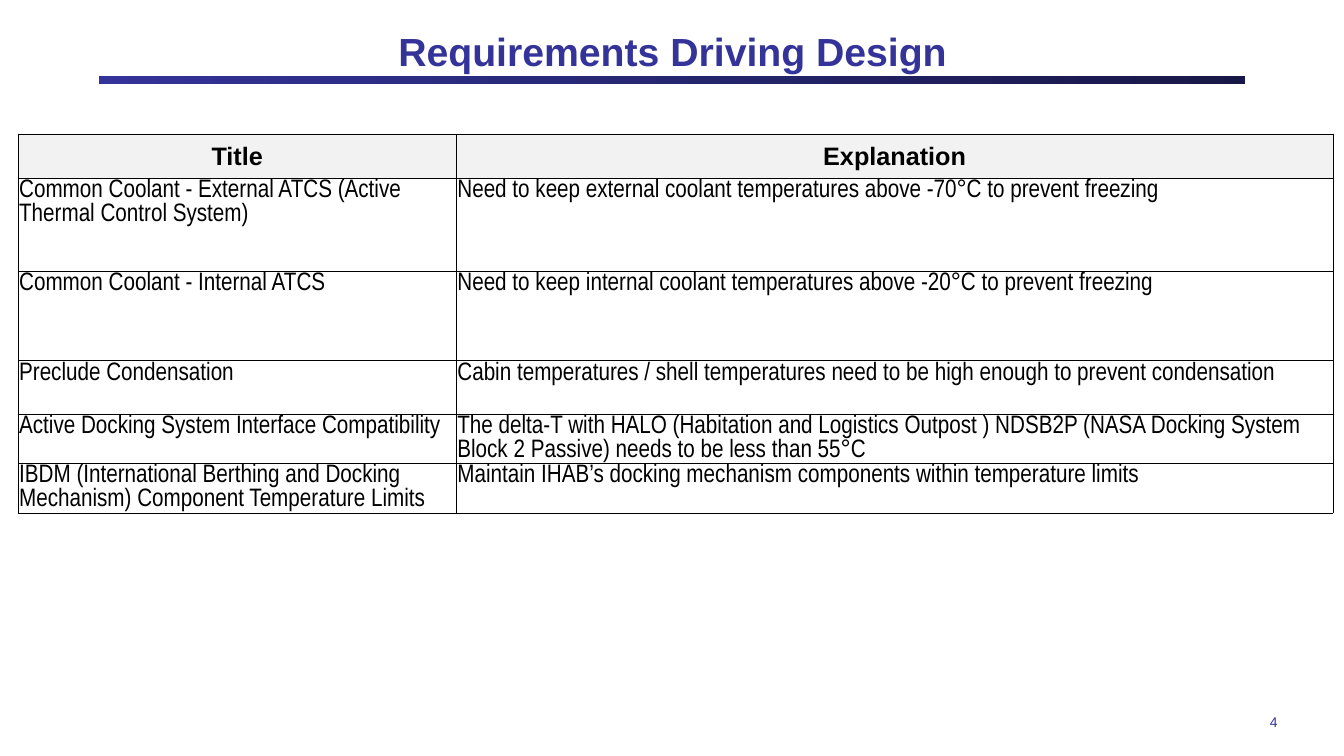
import pptx
import pptx.util
import pptx.dml.color
import pptx.enum.dml
import pptx.enum.shapes
import pptx.enum.text
import lxml.etree
import pptx.oxml.ns

inch = pptx.util.Inches
align = pptx.enum.text.PP_ALIGN
anchor = pptx.enum.text.MSO_ANCHOR
middle = anchor.MIDDLE


def tint(code):
    return pptx.dml.color.RGBColor.from_string(code)


def write(box, text, size=18, face="Arial", color="000000", bold=False,
          side=align.LEFT, place=anchor.TOP, pads=(0.01, 0.01, 0.01, 0)):
    frame = box.text_frame
    frame.word_wrap = True
    box.vertical_anchor = frame.vertical_anchor = place
    for spot in (box, frame):
        spot.margin_left, spot.margin_top, spot.margin_right, spot.margin_bottom = map(inch, pads)
    para = frame.paragraphs[0]
    para.alignment = side
    run = para.add_run()
    run.text = text
    run.font.size = pptx.util.Pt(size)
    run.font.name = face
    run.font.bold = bold
    run.font.color.rgb = tint(color)


deck = pptx.Presentation()
deck.slide_width, deck.slide_height = inch(13.33), inch(7.5)
slide = deck.slides.add_slide(deck.slide_layouts[5])
shapes = slide.shapes

bar = shapes.add_shape(pptx.enum.shapes.MSO_SHAPE.RECTANGLE,
                       inch(0.98), inch(0.75), inch(11.37), inch(0.08))
bar.shadow.inherit = False
bar.line.fill.background()
bar.fill.gradient()
bar.fill.gradient_angle = 0
for stop, code, spot in zip(bar.fill.gradient_stops, ("333399", "181847"), (0, 1)):
    stop.color.rgb = tint(code)
    stop.position = spot

title = shapes.title
title.left, title.top, title.width, title.height = map(inch, (0.67, 0.21, 12, 0.58))
write(title, "Requirements Driving Design", size=28, color="333399", bold=True,
      side=align.CENTER, place=middle, pads=(0.1, 0, 0.1, 0))

rows = [
    (0.44, "Title", "Explanation"),
    (0.92, "Common Coolant - External ATCS (Active Thermal Control System)",
     "Need to keep external coolant temperatures above -70°C to prevent freezing"),
    (0.89, "Common Coolant - Internal ATCS",
     "Need to keep internal coolant temperatures above -20°C to prevent freezing"),
    (0.53, "Preclude Condensation",
     "Cabin temperatures / shell temperatures need to be high enough to prevent condensation"),
    (0.49, "Active Docking System Interface Compatibility",
     "The delta-T with HALO (Habitation and Logistics Outpost ) NDSB2P "
     "(NASA Docking System Block 2 Passive) needs to be less than 55°C"),
    (0.49, "IBDM (International Berthing and Docking Mechanism) Component Temperature Limits",
     "Maintain IHAB’s docking mechanism components within temperature limits"),
]
wide = 13.04
tall = sum(row[0] for row in rows)
table = shapes.add_table(len(rows), 2, inch(0.18), inch(1.33), inch(wide), inch(tall)).table
table.first_row = table.horz_banding = False
for col, share in zip(table.columns, (1, 2)):
    col.width = inch(wide * share / 3)

qn = pptx.oxml.ns.qn
for r, (high, *texts) in enumerate(rows):
    table.rows[r].height = inch(high)
    for c, text in enumerate(texts):
        cell = table.cell(r, c)
        props = cell._tc.get_or_add_tcPr()
        for edge in ("a:lnL", "a:lnR", "a:lnT", "a:lnB"):
            line = lxml.etree.SubElement(props, qn(edge), w=str(pptx.util.Pt(0.5)))
            fill = lxml.etree.SubElement(line, qn("a:solidFill"))
            lxml.etree.SubElement(fill, qn("a:srgbClr"), val="000000")
        if r == 0:
            cell.fill.solid()
            cell.fill.fore_color.rgb = tint("F2F2F2")
            write(cell, text, bold=True, side=align.CENTER, place=middle)
        else:
            cell.fill.background()
            write(cell, text, face="Arial Narrow")

page = shapes.add_textbox(inch(9.89), inch(7), inch(2.78), inch(0.33))
write(page, "4", size=10, color="333399", side=align.RIGHT, place=middle, pads=(0, 0, 0, 0))

deck.save("out.pptx")
